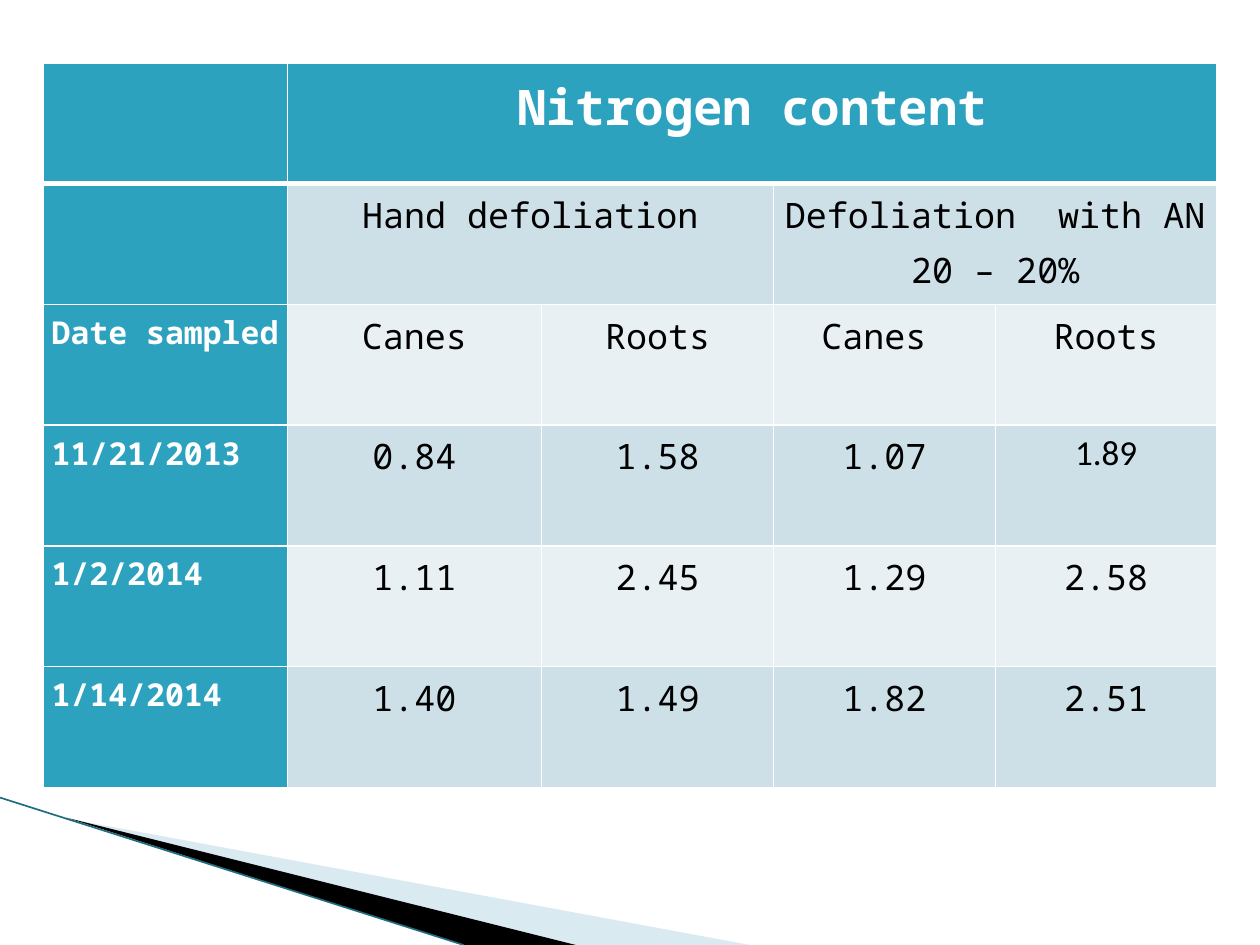
"""Build a slide with a table of nitrogen content in canes and roots by defoliation method."""
import pptx
import pptx.dml.color
import pptx.enum.shapes
import pptx.enum.text
import pptx.oxml
import pptx.oxml.ns
import pptx.util

THEME = {
    "font": "Noto Sans Mono", "odd_font": "Calibri",
    "heading_size": 28, "body_size": 20, "date_size": 18,
    "accent": "2DA2BF", "bands": ("CDE0E8", "E8F0F4"),
    "light": "FFFFFF", "dark": "000000", "pale": "A0CBDC", "edge": "1F6E80",
}
NAMESPACE = pptx.oxml.ns.nsdecls("a")


def color(name):
    return pptx.dml.color.RGBColor.from_string(name)


presentation = pptx.Presentation()
presentation.slide_width = pptx.util.Inches(10)
presentation.slide_height = pptx.util.Inches(7.5)
width, height = presentation.slide_width, presentation.slide_height
inch = width // 10
slide = presentation.slides.add_slide(presentation.slide_layouts[6])

wedges = [
    ([(0.55, 6.5), (5.95, 7.5), (4.56, 7.5)], THEME["pale"], 40),
    ([(0.53, 6.49), (4.57, 7.5), (3.68, 7.5)], THEME["dark"], 100),
]
for corners, tint, opacity in wedges:
    points = [(round(x * inch), round(y * inch)) for x, y in corners]
    builder = slide.shapes.build_freeform(*points[0])
    builder.add_line_segments(points[1:], close=True)
    wedge = builder.convert_to_shape()
    wedge.shadow.inherit = False
    wedge.line.fill.background()
    wedge.fill.solid()
    wedge.fill.fore_color.rgb = color(tint)
    if opacity < 100:
        shade = wedge.fill._xPr.find(".//" + pptx.oxml.ns.qn("a:srgbClr"))
        shade.append(pptx.oxml.parse_xml(f'<a:alpha {NAMESPACE} val="{opacity * 1000}"/>'))

slope = slide.shapes.add_connector(
    pptx.enum.shapes.MSO_CONNECTOR.STRAIGHT, 0, round(6.33 * inch), round(3.68 * inch), height)
slope.line.color.rgb = color(THEME["edge"])
slope.line.width = pptx.util.Pt(0.95)
slope._element.spPr.append(pptx.oxml.parse_xml(f"<a:effectLst {NAMESPACE}/>"))

rows = [
    ["", "Nitrogen content", "", "", ""],
    ["", "Hand defoliation", "", "Defoliation  with AN 20 – 20%", ""],
    ["Date sampled", "Canes", "Roots", "Canes ", "Roots"],
    ["11/21/2013", "0.84", "1.58", "1.07", "1.89"],
    ["1/2/2014", "1.11", "2.45", "1.29", "2.58"],
    ["1/14/2014", "1.40", "1.49", "1.82", "2.51"],
]
column_widths = [1.94, 2.02, 1.84, 1.76, 1.76]
row_height = round(5.75 * inch / len(rows))
nitrogen = slide.shapes.add_table(
    len(rows), len(column_widths), round(0.34 * inch), round(0.5 * inch),
    round(sum(column_widths) * inch), row_height * len(rows)).table
for column, share in zip(nitrogen.columns, column_widths):
    column.width = round(share * inch)

for r, values in enumerate(rows):
    nitrogen.rows[r].height = row_height
    for c, value in enumerate(values):
        cell = nitrogen.cell(r, c)
        is_header = r == 0 or c == 0
        properties = cell._tc.get_or_add_tcPr()
        for side in "LRTB":
            thick = (r == 0 and side == "B") or (r == 1 and side == "T")
            properties.append(pptx.oxml.parse_xml(
                f'<a:ln{side} {NAMESPACE} w="{pptx.util.Pt(3 if thick else 1)}"><a:solidFill>'
                f'<a:srgbClr val="{THEME["light"]}"/></a:solidFill></a:ln{side}>'))
        cell.fill.solid()
        cell.fill.fore_color.rgb = color(THEME["accent"] if is_header else THEME["bands"][(r - 1) % 2])
        cell.margin_left = cell.margin_right = pptx.util.Inches(0.07)
        cell.margin_top = cell.margin_bottom = 0
        cell.text = value
        paragraph = cell.text_frame.paragraphs[0]
        paragraph.line_spacing = 1.15
        paragraph.alignment = pptx.enum.text.PP_ALIGN.LEFT if c == 0 else pptx.enum.text.PP_ALIGN.CENTER
        size = "date_size" if c == 0 else "heading_size" if r == 0 else "body_size"
        paragraph.font.size = pptx.util.Pt(THEME[size])
        paragraph.font.name = THEME["odd_font" if value == "1.89" else "font"]
        paragraph.font.bold = is_header
        paragraph.font.color.rgb = color(THEME["light" if is_header else "dark"])

for r, first, last in [(0, 1, 4), (1, 1, 2), (1, 3, 4)]:
    nitrogen.cell(r, first).merge(nitrogen.cell(r, last))

presentation.save("out.pptx")
